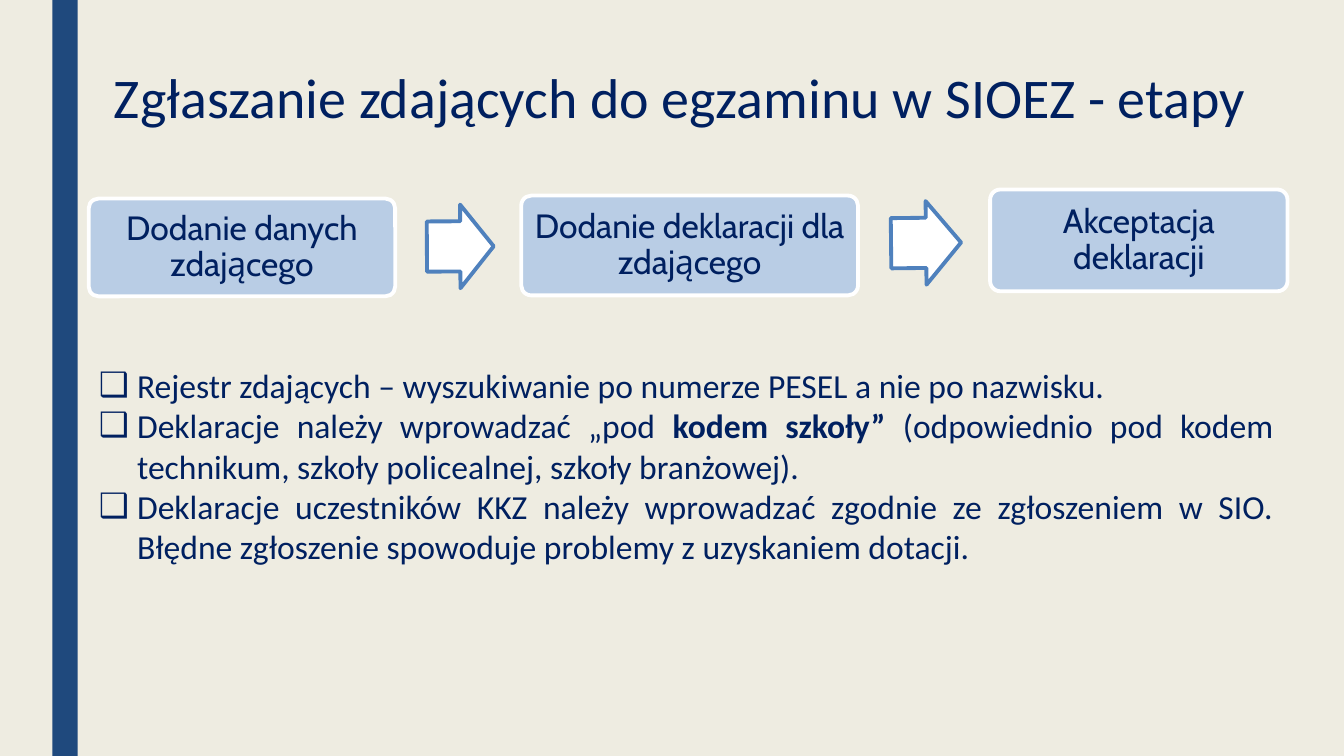
"""Build the slide on the stages of registering exam candidates."""
import math
from lxml import etree
from pptx import Presentation
from pptx.dml.color import RGBColor
from pptx.enum.shapes import MSO_SHAPE
from pptx.enum.text import MSO_ANCHOR, MSO_AUTO_SIZE, PP_ALIGN
from pptx.oxml.ns import qn
from pptx.util import Inches, Pt

RECT, ROUND, ARROW = MSO_SHAPE.RECTANGLE, MSO_SHAPE.ROUNDED_RECTANGLE, MSO_SHAPE.RIGHT_ARROW
LEFT, CENTER, JUSTIFY = PP_ALIGN.LEFT, PP_ALIGN.CENTER, PP_ALIGN.JUSTIFY
TOP, MIDDLE = MSO_ANCHOR.TOP, MSO_ANCHOR.MIDDLE
WIDE, HIGH = 13.33, 7.5
NAVY, BLUE, PALE, EDGE = "002060", "1F497D", "B9CDE5", "4F81BD"
WHITE, CREAM = "FFFFFF", "EEECE1"

TITLE = "Zgłaszanie zdających do egzaminu w SIOEZ - etapy"
STEPS = [
    ("Dodanie danych zdającego", (0.88, 1.97, 3.04, 0.97)),
    ("Dodanie deklaracji dla zdającego", (5.17, 1.94, 3.34, 0.99)),
    ("Akceptacja deklaracji", (9.82, 1.88, 2.95, 1.01)),
]
NOTES = [
    [("Rejestr zdających – wyszukiwanie po numerze PESEL a nie po nazwisku.", False)],
    [("Deklaracje należy wprowadzać „pod ", False), ("kodem szkoły” ", True),
     ("(odpowiednio pod kodem technikum, szkoły policealnej, szkoły branżowej).", False)],
    [("Deklaracje uczestników KKZ należy wprowadzać zgodnie ze zgłoszeniem w SIO. "
      "Błędne zgłoszenie spowoduje problemy z uzyskaniem dotacji.", False)],
]


def color(text):
    return RGBColor.from_string(text)


def place(shape, box):
    shape.left, shape.top, shape.width, shape.height = map(Inches, box)


def write(shape, paras, size=24, face="Calibri", align=LEFT, anchor=TOP,
          line=1.0, inset=(0.1, 0.05), mark=None):
    frame = shape.text_frame
    frame.word_wrap = True
    frame.auto_size = MSO_AUTO_SIZE.NONE
    frame.vertical_anchor = anchor
    frame.margin_left = frame.margin_right = Inches(inset[0])
    frame.margin_top = frame.margin_bottom = Inches(inset[1])
    for i, runs in enumerate(paras):
        para = frame.add_paragraph() if i else frame.paragraphs[0]
        para.alignment, para.line_spacing = align, line
        para.space_before = Pt(0)
        if mark:
            props = para._p.get_or_add_pPr()
            props.set("marL", str(Inches(0.38)))
            props.set("indent", str(-Inches(0.38)))
            etree.SubElement(props, qn("a:buChar")).set("char", mark)
        for text, bold in runs:
            run = para.add_run()
            run.text = text
            run.font.name, run.font.size, run.font.bold = face, Pt(size), bold
            run.font.color.rgb = color(NAVY)


def draw(slide, kind, box, fill, edge=None, adjust=()):
    shape = slide.shapes.add_shape(kind, *map(Inches, box))
    shape.shadow.inherit = False
    shape.fill.solid()
    shape.fill.fore_color.rgb = color(fill)
    if edge:
        shape.line.color.rgb = color(edge)
        shape.line.width = Pt(2.75)
    else:
        shape.line.fill.background()
    for i, value in enumerate(adjust):
        shape.adjustments[i] = value
    return shape


def link(slide, start, end):
    left, right = start[0] + start[2], end[0]
    wide, high = 0.53 * (right - left), 0.83
    mids = [(x + w / 2, y + h / 2) for x, y, w, h in (start, end)]
    across, down = (b - a for a, b in zip(*mids))
    mid = (mids[0][1] + mids[1][1]) / 2
    box = ((left + right - wide) / 2 + 0.02, mid - high / 2, wide, high)
    arrow = draw(slide, ARROW, box, WHITE, EDGE, (0.6, 0.5))
    arrow.rotation = math.degrees(math.atan2(down, across))


def main():
    deck = Presentation()
    deck.slide_width, deck.slide_height = Inches(WIDE), Inches(HIGH)
    slide = deck.slides.add_slide(deck.slide_layouts[1])
    slide.background.fill.solid()
    slide.background.fill.fore_color.rgb = color(CREAM)
    draw(slide, RECT, (0.52, 0, 0.25, HIGH), BLUE)
    title, body = slide.placeholders
    place(title, (1.03, 0.65, 12.9, 1.21))
    write(title, [[(TITLE, False)]], size=40, line=0.89)
    place(body, (0.88, 3.57, 11.85, 2.12))
    write(body, NOTES, align=JUSTIFY, mark="❑")
    for text, box in STEPS:
        step = draw(slide, ROUND, box, PALE, WHITE, (0.1,))
        write(step, [[(text, False)]], face="Cabin", align=CENTER,
              anchor=MIDDLE, line=0.9, inset=(0.08, 0.08))
    for (_, start), (_, end) in zip(STEPS, STEPS[1:]):
        link(slide, start, end)
    deck.save("out.pptx")


if __name__ == "__main__":
    main()
